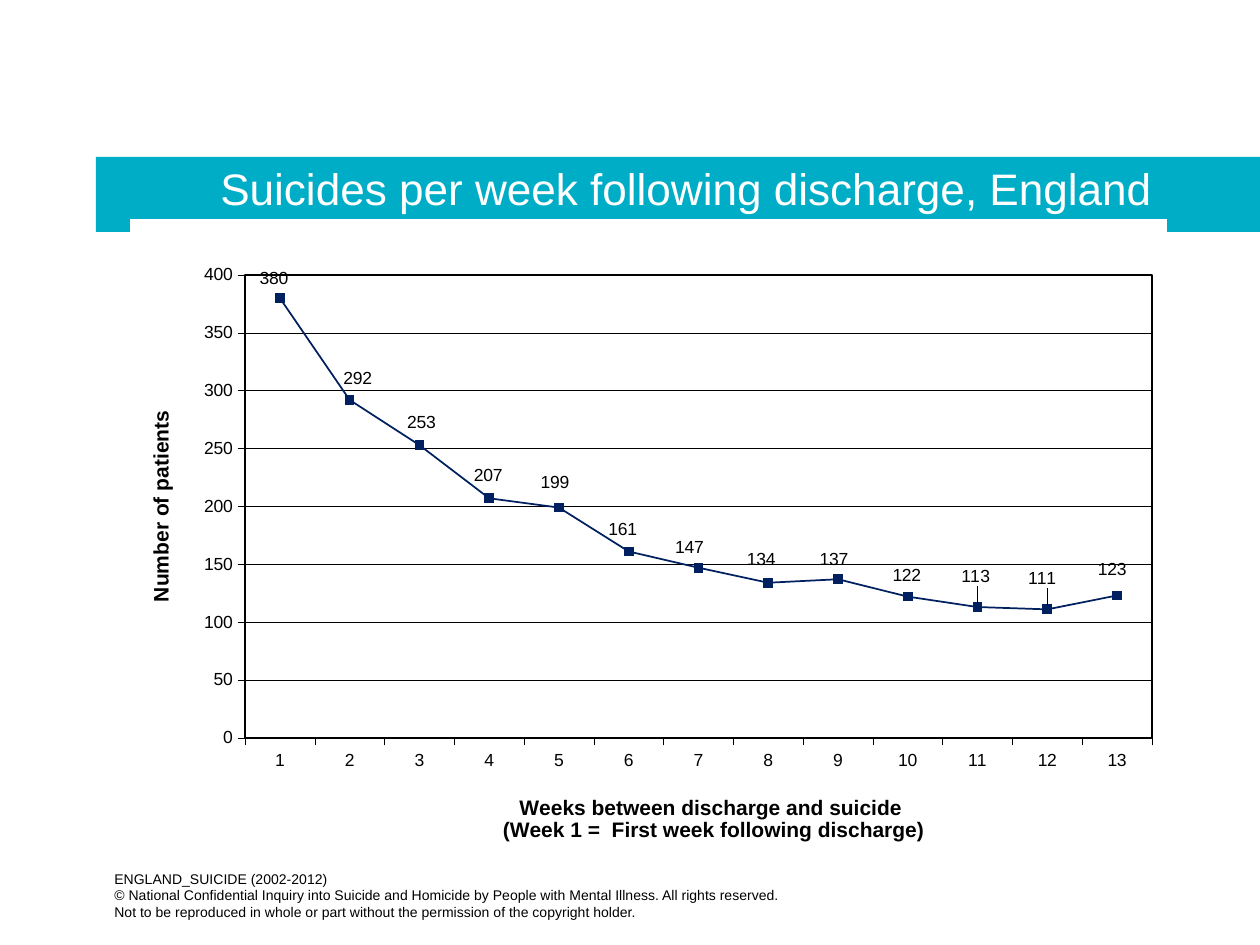
"""Build the slide on suicides per week following discharge in England."""
from dataclasses import dataclass

from lxml import etree
from pptx import Presentation
from pptx.chart.data import CategoryChartData
from pptx.dml.color import RGBColor
from pptx.enum.chart import XL_CHART_TYPE, XL_LABEL_POSITION, XL_MARKER_STYLE, XL_TICK_MARK
from pptx.enum.shapes import MSO_SHAPE
from pptx.enum.text import MSO_ANCHOR, PP_ALIGN
from pptx.oxml import parse_xml
from pptx.oxml.ns import nsdecls, qn
from pptx.util import Emu, Pt

LINE_MARKERS = XL_CHART_TYPE.LINE_MARKERS
ABOVE = XL_LABEL_POSITION.ABOVE
SQUARE = XL_MARKER_STYLE.SQUARE
OUTSIDE = XL_TICK_MARK.OUTSIDE
RECTANGLE = MSO_SHAPE.RECTANGLE
TOP = MSO_ANCHOR.TOP
LEFT, CENTER = PP_ALIGN.LEFT, PP_ALIGN.CENTER

FONT = "Arial"
TEAL, NAVY, BLACK, WHITE = "00ADC6", "002060", "000000", "FFFFFF"


@dataclass
class Box:
    """Position and size in px."""
    x: int
    y: int
    w: int
    h: int


@dataclass
class Week:
    """Patients in one week, with the px shift of the value label."""
    patients: int
    dx: int
    dy: int


SLIDE = Box(0, 0, 1260, 945)
BANNER = Box(96, 157, 1164, 75)
CHART = Box(130, 219, 1037, 635)
PLOT = Box(115, 56, 907, 463)
FOOTER = Box(102, 864, 692, 81)
WEEKS = [
    Week(380, -6, 0), Week(292, 8, -2), Week(253, 2, -3), Week(207, -1, -4),
    Week(199, -4, -6), Week(161, -6, -3), Week(147, -9, -1), Week(134, -7, -4),
    Week(137, -4, -1), Week(122, -1, -2), Week(113, -2, -11), Week(111, -5, -12),
    Week(123, -5, -7),
]
X_TITLE = ["Weeks between discharge and suicide ", "(Week 1 =  First week following discharge)"]
Y_TITLE = ["Number of patients"]
NOTICE = [
    "ENGLAND_SUICIDE (2002-2012)",
    "© National Confidential Inquiry into Suicide and Homicide by People with Mental Illness. "
    "All rights reserved.",
    "Not to be reproduced in whole or part without the permission of the copyright holder.",
]


def px(n: int) -> Emu:
    """Turn px into EMU."""
    return Emu(round(n * 914400 / 126))


def place(box: Box) -> tuple:
    """Return a box as left, top, width and height in EMU."""
    return px(box.x), px(box.y), px(box.w), px(box.h)


def rgb(color: str) -> RGBColor:
    """Turn a hex string into a colour."""
    return RGBColor.from_string(color)


def style_font(font, size: float, color: str = BLACK, bold: bool = False) -> None:
    """Set the look of a font."""
    font.name, font.size, font.bold = FONT, Pt(size), bold
    font.color.rgb = rgb(color)


def style_line(line, color: str, width: float) -> None:
    """Set the colour and width of a line."""
    line.color.rgb = rgb(color)
    line.width = Pt(width)


def write(tf, lines: list, size: float, color: str = BLACK, bold: bool = False, align=LEFT) -> None:
    """Write one paragraph per line."""
    for i, text in enumerate(lines):
        p = tf.add_paragraph() if i else tf.paragraphs[0]
        p.alignment = align
        r = p.add_run()
        r.text = text
        style_font(r.font, size, color, bold)


def set_layout(parent, index: int, x: int, y: int, size: tuple = (), edge: bool = True) -> None:
    """Give a chart part a manual layout from px within the chart."""
    for old in parent.findall(qn("c:layout")):
        parent.remove(old)
    layout = etree.Element(qn("c:layout"))
    manual = etree.SubElement(layout, qn("c:manualLayout"))
    values = {"layoutTarget": "inner"} if size else {}
    if edge:
        values.update(xMode="edge", yMode="edge")
    values.update(x=x / CHART.w, y=y / CHART.h)
    if size:
        values.update(w=size[0] / CHART.w, h=size[1] / CHART.h)
    for name, value in values.items():
        text = value if isinstance(value, str) else f"{value:.4f}"
        etree.SubElement(manual, qn(f"c:{name}")).set("val", text)
    parent.insert(index, layout)


def style_axis(axis, lines: list, x: int, y: int, turn: int = 0) -> None:
    """Style an axis and place its title."""
    axis.major_tick_mark = OUTSIDE
    style_font(axis.tick_labels.font, 10)
    style_line(axis.format.line, BLACK, 0.25)
    title = axis.axis_title
    write(title.text_frame, lines, 12, bold=True, align=CENTER)
    title.element.find(f".//{qn('a:bodyPr')}").set("rot", str(turn * 60000))
    set_layout(title.element, 1, x, y)


def fill_chart(chart) -> None:
    """Paint the chart white and frame its plot area."""
    white = f'<a:solidFill><a:srgbClr val="{WHITE}"/></a:solidFill>'
    frame = f'<a:ln w="9525"><a:solidFill><a:srgbClr val="{BLACK}"/></a:solidFill></a:ln>'
    sp_pr = '<c:spPr {}>{}{}</c:spPr>'
    ns = nsdecls("c", "a")
    plot_area = chart.element.find(f".//{qn('c:plotArea')}")
    set_layout(plot_area, 0, PLOT.x, PLOT.y, (PLOT.w, PLOT.h))
    plot_area.append(parse_xml(sp_pr.format(ns, white, frame)))
    no_line = "<a:ln><a:noFill/></a:ln>"
    chart.element.find(qn("c:chart")).addnext(parse_xml(sp_pr.format(ns, white, no_line)))


def style_series(chart) -> None:
    """Style the line, its markers and its value labels."""
    series = chart.plots[0].series[0]
    series.smooth = False
    style_line(series.format.line, NAVY, 1)
    marker = series.marker
    marker.style, marker.size = SQUARE, 5
    marker.format.fill.solid()
    marker.format.fill.fore_color.rgb = rgb(NAVY)
    style_line(marker.format.line, NAVY, 1)
    for i in range(len(WEEKS)):
        label = series.points[i].data_label
        style_font(label.font, 10)
        label.position = ABOVE
    for week, label in zip(WEEKS, chart.element.iter(qn("c:dLbl"))):
        set_layout(label, 1, week.dx, week.dy, edge=False)


def add_banner(slide) -> None:
    """Add the title banner."""
    s = slide.shapes.add_shape(RECTANGLE, *place(BANNER))
    s.shadow.inherit = False
    s.fill.solid()
    s.fill.fore_color.rgb = rgb(TEAL)
    s.line.fill.background()
    tf = s.text_frame
    tf.word_wrap, tf.vertical_anchor = True, TOP
    tf.margin_left, tf.margin_top, tf.margin_right, tf.margin_bottom = px(16), px(4), 0, 0
    write(tf, ["Suicides per week following discharge, England"], 25.2, WHITE, align=CENTER)


def add_line_chart(slide) -> None:
    """Add the line chart of patients per week."""
    data = CategoryChartData()
    data.categories = [str(i) for i in range(1, len(WEEKS) + 1)]
    data.add_series("Series 1", [week.patients for week in WEEKS])
    chart = slide.shapes.add_chart(LINE_MARKERS, *place(CHART), data).chart
    chart.has_legend = chart.has_title = False
    style_font(chart.font, 15)
    values = chart.value_axis
    values.minimum_scale, values.maximum_scale, values.major_unit = 0, 400, 50
    values.has_major_gridlines = True
    style_line(values.major_gridlines.format.line, BLACK, 0.25)
    style_axis(values, Y_TITLE, 14, 188, turn=-90)
    style_axis(chart.category_axis, X_TITLE, 369, 572)
    chart.plots[0].vary_by_categories = False
    style_series(chart)
    fill_chart(chart)


def main() -> None:
    """Build and save the slide."""
    prs = Presentation()
    prs.slide_width, prs.slide_height = px(SLIDE.w), px(SLIDE.h)
    slide = prs.slides.add_slide(prs.slide_layouts[6])
    add_banner(slide)
    tf = slide.shapes.add_textbox(*place(FOOTER)).text_frame
    tf.word_wrap = False
    write(tf, NOTICE, 8)
    add_line_chart(slide)
    prs.save("out.pptx")


if __name__ == "__main__":
    main()
